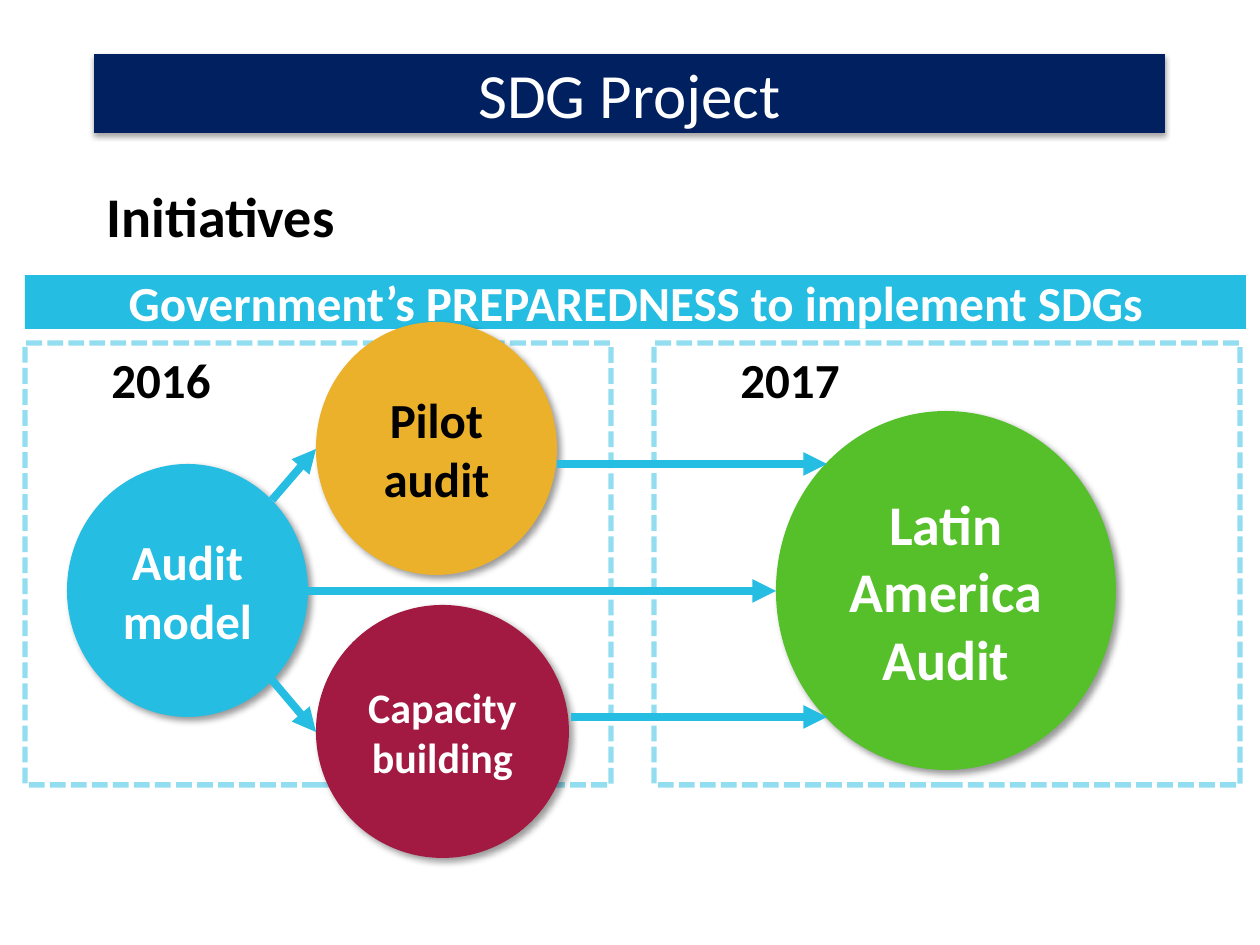
from lxml.etree import SubElement
from pptx import Presentation
from pptx.dml.color import RGBColor
from pptx.enum.dml import MSO_LINE
from pptx.enum.shapes import MSO_CONNECTOR as CONNECTOR, MSO_SHAPE as SHAPE
from pptx.enum.text import MSO_ANCHOR as ANCHOR, MSO_AUTO_SIZE as AUTO_SIZE, PP_ALIGN as ALIGN
from pptx.oxml import parse_xml
from pptx.oxml.ns import nsdecls, qn
from pptx.util import Emu, Pt

PX = 914400 / 126
FONT = "Calibri"
COLORS = {
    "navy": "002060",
    "blue": "26BDE2",
    "green": "56C02B",
    "red": "A21942",
    "yellow": "EBB12B",
    "white": "FFFFFF",
    "black": "000000",
}


def px(length):
    return Emu(round(length * PX))


def rgb(name):
    return RGBColor.from_string(COLORS[name])


def place(shape, box):
    shape.left, shape.top, shape.width, shape.height = map(px, box)


def write(shape, text, size, color, bold=True, align=ALIGN.CENTER, anchor=ANCHOR.MIDDLE):
    frame = shape.text_frame
    frame.text = text
    frame.word_wrap = True
    frame.auto_size = AUTO_SIZE.NONE
    frame.vertical_anchor = anchor
    paragraph = frame.paragraphs[0]
    paragraph.alignment = align
    font = paragraph.runs[0].font
    font.name, font.size, font.bold = FONT, Pt(size), bold
    font.color.rgb = rgb(color)
    return paragraph


def fill_plain(shape, color):
    shape.fill.solid()
    shape.fill.fore_color.rgb = rgb(color)
    shape.line.fill.background()
    shape.shadow.inherit = False


def add_shadow(shape, opacity, blur, distance, angle):
    effects = shape.element.spPr.find(qn("a:effectLst"))
    effects.append(parse_xml(
        f'<a:outerShdw {nsdecls("a")} blurRad="{Pt(blur)}" dist="{Pt(distance)}" '
        f'dir="{angle * 60000}" rotWithShape="0"><a:srgbClr val="{COLORS["black"]}">'
        f'<a:alpha val="{opacity * 1000}"/></a:srgbClr></a:outerShdw>'))


def set_title(slide):
    title = slide.shapes.title
    place(title, (94, 54, 1071, 79))
    geometry = parse_xml(f'<a:prstGeom {nsdecls("a")} prst="roundRect"><a:avLst/></a:prstGeom>')
    title.element.spPr.insert(1, geometry)
    fill_plain(title, "navy")
    add_shadow(title, 35, 3.1, 1.8, 90)
    write(title, "SDG Project", 36, "white", bold=False)


def set_heading(slide):
    body = slide.placeholders[1]
    place(body, (94, 175, 1101, 79))
    paragraph = write(body, "Initiatives", 32, "black", align=ALIGN.LEFT, anchor=ANCHOR.TOP)
    paragraph.space_before = Pt(0)
    properties = paragraph._p.get_or_add_pPr()
    properties.set("marL", "0")
    properties.set("indent", "0")
    SubElement(properties, qn("a:buNone"))


def add_panel(slide, left, year):
    panel = slide.shapes.add_shape(SHAPE.RECTANGLE, *map(px, (left, 343, 586, 442)))
    panel.fill.background()
    panel.shadow.inherit = False
    panel.line.color.rgb = rgb("blue")
    panel.line.width = Pt(3)
    panel.line.dash_style = MSO_LINE.SQUARE_DOT
    line_color = panel.element.spPr.find(f'{qn("a:ln")}/{qn("a:solidFill")}/{qn("a:srgbClr")}')
    SubElement(line_color, qn("a:alpha")).set("val", "50000")
    paragraph = write(panel, year, 28, "black", align=ALIGN.LEFT, anchor=ANCHOR.TOP)
    paragraph._p.get_or_add_pPr().set("marL", str(px(74)))


def add_banner(slide):
    banner = slide.shapes.add_shape(SHAPE.RECTANGLE, *map(px, (25, 275, 1221, 54)))
    fill_plain(banner, "blue")
    write(banner, "Government’s PREPAREDNESS to implement SDGs", 28, "white")


def add_circle(slide, box, fill, text, size, color):
    circle = slide.shapes.add_shape(SHAPE.OVAL, *map(px, box))
    fill_plain(circle, fill)
    add_shadow(circle, 40, 4, 3, 45)
    write(circle, text, size, color)


def add_arrow(slide, *points):
    arrow = slide.shapes.add_connector(CONNECTOR.STRAIGHT, *map(px, points))
    arrow.line.color.rgb = rgb("blue")
    arrow.line.width = Pt(4.5)
    properties = arrow.element.spPr
    SubElement(properties.find(qn("a:ln")), qn("a:tailEnd")).set("type", "triangle")
    SubElement(properties, qn("a:effectLst"))


def main():
    presentation = Presentation()
    presentation.slide_width, presentation.slide_height = px(1260), px(945)
    slide = presentation.slides.add_slide(presentation.slide_layouts[1])
    set_title(slide)
    set_heading(slide)
    add_panel(slide, 654, "2017")
    add_panel(slide, 25, "2016")
    add_banner(slide)
    for circle in (
        ((776, 411, 340, 359), "green", "Latin America Audit", 32, "white"),
        ((67, 464, 241, 253), "blue", "Audit model", 28, "white"),
        ((316, 605, 253, 253), "red", "Capacity building", 24, "white"),
        ((316, 322, 241, 253), "yellow", "Pilot audit", 28, "black"),
    ):
        add_circle(slide, *circle)
    for points in (
        (272, 500, 316, 449),
        (272, 680, 316, 732),
        (308, 591, 776, 591),
        (571, 717, 827, 717),
        (557, 464, 827, 464),
    ):
        add_arrow(slide, *points)
    presentation.save("out.pptx")


if __name__ == "__main__":
    main()
